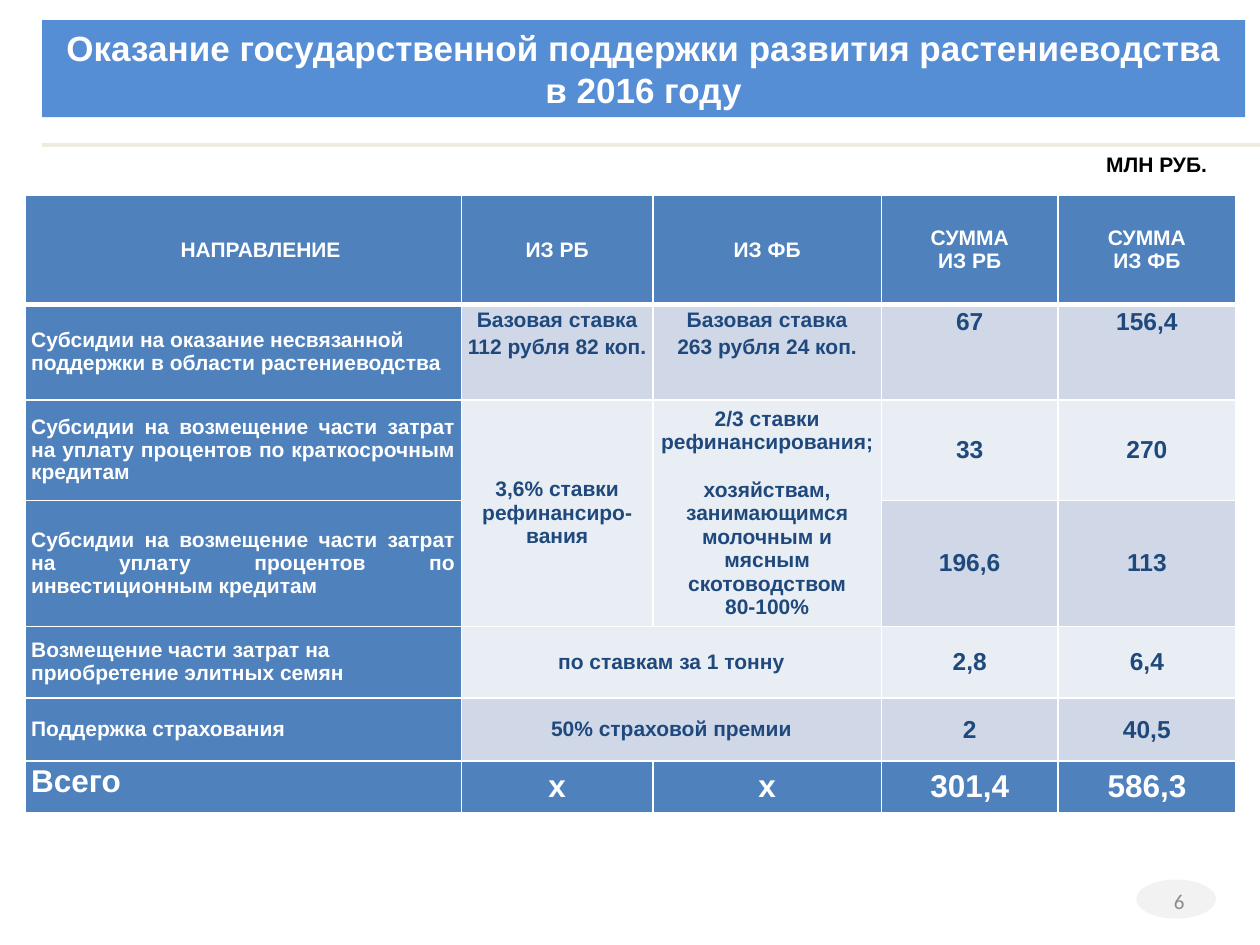
from lxml import etree
from pptx import Presentation
from pptx.dml.color import RGBColor
from pptx.enum.shapes import MSO_CONNECTOR, MSO_SHAPE
from pptx.enum.text import MSO_ANCHOR, MSO_AUTO_SIZE, PP_ALIGN
from pptx.oxml import parse_xml
from pptx.oxml.ns import nsdecls, qn
from pptx.util import Pt

WHITE, NAVY, BLUE = "FFFFFF", "1F497D", "4F81BD"
DARK_BAND, LIGHT_BAND = "D0D8E8", "E9EDF4"
LEFT, CENTER, RIGHT, JUSTIFY = PP_ALIGN.LEFT, PP_ALIGN.CENTER, PP_ALIGN.RIGHT, PP_ALIGN.JUSTIFY

COLUMNS = [249.5, 109.5, 130.5, 101, 101.5]
HEIGHTS = [62.5, 54.5, 57.5, 72, 41, 36, 29.5]
ROWS = [
    ["НАПРАВЛЕНИЕ", "ИЗ РБ", "ИЗ ФБ", "СУММА\nИЗ РБ", "СУММА\nИЗ ФБ"],
    ["Субсидии на оказание несвязанной поддержки в области растениеводства",
     "Базовая ставка\n112 рубля 82 коп.", "Базовая ставка\n263 рубля 24 коп.", "67", "156,4"],
    ["Субсидии на возмещение части затрат на уплату процентов по краткосрочным кредитам",
     "3,6% ставки рефинансиро-вания",
     "2/3 ставки рефинансирования;\nхозяйствам, занимающимся молочным и мясным скотоводством\n80-100%",
     "33", "270"],
    ["Субсидии на возмещение части затрат на уплату процентов по инвестиционным кредитам",
     "", "", "196,6", "113"],
    ["Возмещение части затрат на приобретение элитных семян", "по ставкам за 1 тонну", "", "2,8", "6,4"],
    ["Поддержка страхования", "50% страховой премии", "", "2", "40,5"],
    ["Всего", "х", "х", "301,4", "586,3"],
]
BANDS = [BLUE, DARK_BAND, LIGHT_BAND, DARK_BAND, LIGHT_BAND, DARK_BAND, BLUE]
MERGES = [((2, 1), (3, 1)), ((2, 2), (3, 2)), ((4, 1), (4, 2)), ((5, 1), (5, 2))]
HEADER, SUBSIDY, TOTAL = 0, 1, len(ROWS) - 1


def color(value):
    return RGBColor.from_string(value)


def paint(shape, value):
    shape.fill.solid()
    shape.fill.fore_color.rgb = color(value)


def write(frame, text, size, value, align=LEFT, bold=True, font="Arial", spacing=None):
    frame.text = text
    for para in frame.paragraphs:
        para.alignment = align
        if spacing:
            para.line_spacing = spacing
        for span in para.runs:
            span.font.size, span.font.bold, span.font.name = Pt(size), bold, font
            span.font.color.rgb = color(value)


def add_heading(slide, left, top, width, height):
    """Title band with a rule beneath it, running to the slide's edge."""
    title = slide.shapes.title
    title.left, title.top, title.width, title.height = Pt(left), Pt(top), Pt(width), Pt(height)
    paint(title, "558ED5")
    frame = title.text_frame
    write(frame, "Оказание государственной поддержки развития растениеводства в 2016 году",
          20, WHITE, CENTER)
    frame.auto_size = MSO_AUTO_SIZE.NONE
    frame.vertical_anchor = MSO_ANCHOR.MIDDLE

    rule_top = Pt(top + height + 16)
    rule = slide.shapes.add_connector(MSO_CONNECTOR.STRAIGHT, Pt(left), rule_top, Pt(720), rule_top)
    rule.line.color.rgb = color("EEECE1")
    rule.line.width = Pt(2.25)
    etree.SubElement(rule._element.spPr, qn("a:effectLst"))


def add_unit(slide, left, top, width, height):
    box = slide.shapes.add_textbox(Pt(left), Pt(top), Pt(width), Pt(height))
    box.text_frame.word_wrap = False
    write(box.text_frame, "МЛН РУБ.", 12, "000000")


def set_borders(cell, bottom):
    for side, width in (("L", 1), ("R", 1), ("T", 1), ("B", bottom)):
        cell._tc.get_or_add_tcPr().append(parse_xml(
            f'<a:ln{side} {nsdecls("a")} w="{Pt(width)}"><a:solidFill>'
            f'<a:srgbClr val="{WHITE}"/></a:solidFill></a:ln{side}>'))


def fill_cell(cell, row, column):
    is_label, is_total = column == 0, row == TOTAL
    on_blue = is_label or row in (HEADER, TOTAL)
    align, spacing = CENTER, None
    if is_label and row != HEADER:
        align = JUSTIFY if row in (2, 3) else LEFT
        spacing = Pt(11 if is_total else 13)
    elif row == SUBSIDY:
        spacing = 1.15
    size = 18 if is_total else 14 if column > 2 and row != HEADER else 12

    set_borders(cell, 3 if row == HEADER else 1)
    paint(cell, BLUE if on_blue else BANDS[row])
    cell.margin_left = cell.margin_right = Pt(3.6)
    cell.margin_top = cell.margin_bottom = 0
    at_top = (row == SUBSIDY and not is_label) or (is_total and is_label)
    cell.vertical_anchor = MSO_ANCHOR.TOP if at_top else MSO_ANCHOR.MIDDLE
    if ROWS[row][column]:
        write(cell.text_frame, ROWS[row][column], size, WHITE if on_blue else NAVY, align, spacing=spacing)


def add_support_table(slide, left, top):
    table = slide.shapes.add_table(len(ROWS), len(COLUMNS), Pt(left), Pt(top),
                                   Pt(sum(COLUMNS)), Pt(sum(HEIGHTS))).table
    for column, width in zip(table.columns, COLUMNS):
        column.width = Pt(width)
    for row, height in zip(table.rows, HEIGHTS):
        row.height = Pt(height)
    for first, last in MERGES:
        table.cell(*first).merge(table.cell(*last))
    for row in range(len(ROWS)):
        for column in range(len(COLUMNS)):
            fill_cell(table.cell(row, column), row, column)
    table.cell(HEADER, 0).margin_left = Pt(23.6)
    table.cell(TOTAL, 0).margin_top = Pt(11)
    table.cell(2, 2).text_frame.paragraphs[1].space_before = Pt(13.8)


def add_page_number(slide, left, top, width, height):
    box = slide.shapes.add_textbox(Pt(left), Pt(top), Pt(width), Pt(height))
    box.text_frame.word_wrap = True
    box.text_frame.vertical_anchor = MSO_ANCHOR.MIDDLE
    write(box.text_frame, "6", 12, "8C8C8C", RIGHT, bold=False, font="Calibri")


def add_badge(slide, left, top, width, height):
    badge = slide.shapes.add_shape(MSO_SHAPE.OVAL, Pt(left), Pt(top), Pt(width), Pt(height))
    badge.shadow.inherit = False
    paint(badge, "F2F2F2")
    badge.line.fill.background()


def main():
    deck = Presentation()
    deck.slide_width, deck.slide_height = Pt(720), Pt(540)
    slide = deck.slides.add_slide(deck.slide_layouts[5])
    add_badge(slide, 649.4, 502.6, 45.4, 22.3)
    add_heading(slide, 24, 11.5, 687.5, 55.5)
    add_support_table(slide, 14.2, 111.5)
    add_unit(slide, 625, 82.8, 72.7, 21.6)
    add_page_number(slide, 516, 500.5, 168, 28.8)
    deck.save("out.pptx")


if __name__ == "__main__":
    main()
